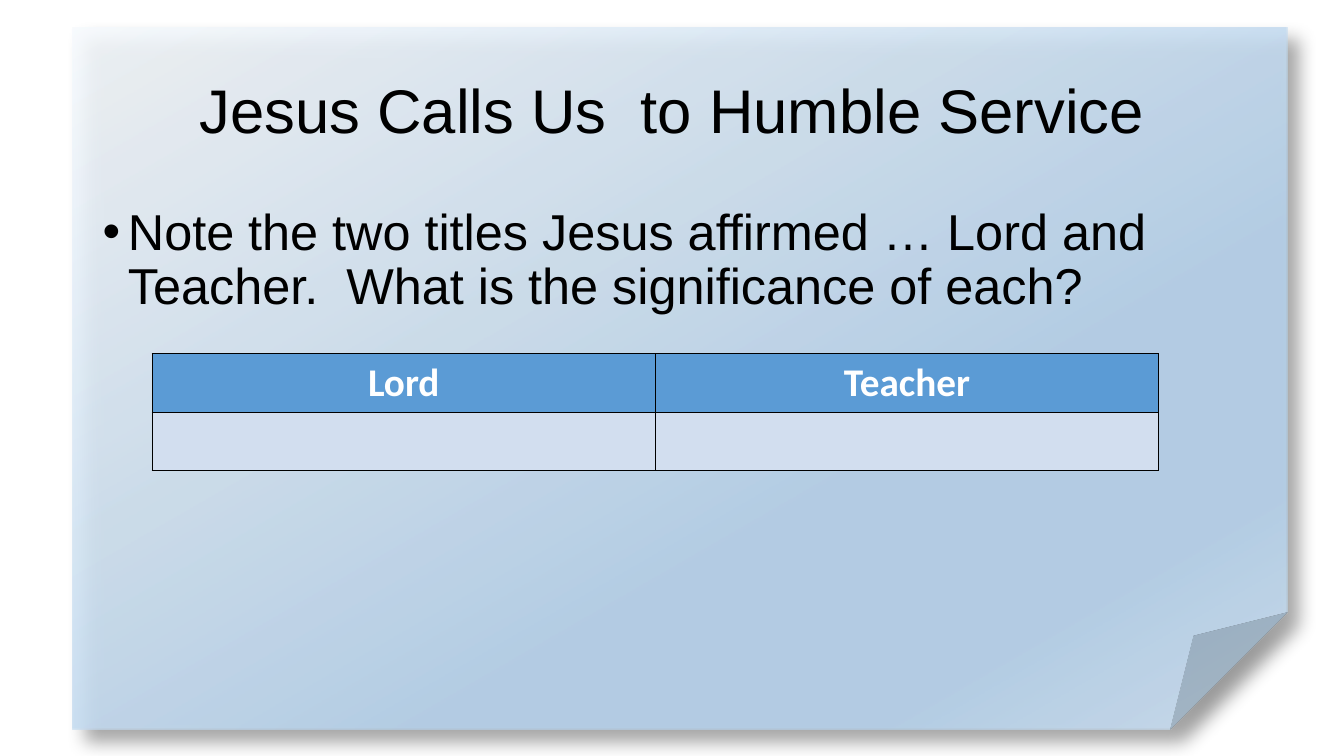
from lxml import etree
from pptx import Presentation
from pptx.dml.color import RGBColor
from pptx.enum.shapes import MSO_SHAPE
from pptx.enum.text import MSO_ANCHOR, PP_ALIGN
from pptx.oxml import parse_xml
from pptx.oxml.ns import nsdecls, qn
from pptx.util import Inches, Pt

TITLE = "Jesus Calls Us  to Humble Service"
BODY = ("Note the two titles Jesus affirmed … Lord and Teacher.  "
        "What is the significance of each?")
ROWS = [("Lord", "Teacher"), ("", "")]

BLACK = RGBColor(0x00, 0x00, 0x00)
WHITE = RGBColor(0xFF, 0xFF, 0xFF)
BLUE = RGBColor(0x5B, 0x9B, 0xD5)
PALE = RGBColor(0xD2, 0xDE, 0xEF)
PAPER = [(0, "F7FAFD"), (64, "B5D2EC"), (83, "B5D2EC"), (100, "CEE1F2")]

LEFT, CENTER = PP_ALIGN.LEFT, PP_ALIGN.CENTER
TOP, MIDDLE = MSO_ANCHOR.TOP, MSO_ANCHOR.MIDDLE
FOLDED = MSO_SHAPE.FOLDED_CORNER

COL_W, ROW_H = 4.99, 0.58


def box(at):
    return [Inches(n) for n in at]


def write(frame, text, size, font="Arial", color=BLACK, bold=False,
          align=LEFT, spacing=None, bullet=False):
    para = frame.paragraphs[0]
    para.alignment = align
    para.line_spacing = spacing
    if bullet:
        props = para._p.get_or_add_pPr()
        props.set("marL", str(Inches(0.25)))
        props.set("indent", str(Inches(-0.25)))
        etree.SubElement(props, qn("a:buFont")).set("typeface", "Arial")
        etree.SubElement(props, qn("a:buChar")).set("char", "•")
    run = para.add_run()
    run.text = text
    run.font.size = Pt(size)
    run.font.name = font
    run.font.bold = bold
    run.font.color.rgb = color


def add_text(slide, at, text, size, anchor=TOP, **style):
    frame = slide.shapes.add_textbox(*box(at)).text_frame
    frame.word_wrap = True
    frame.vertical_anchor = anchor
    write(frame, text, size, **style)


def add_paper(slide):
    """Folded sheet with a translucent gradient and a soft shadow."""
    sheet = slide.shapes.add_shape(FOLDED, *box((0.72, 0.27, 12.05, 6.97)))
    sheet.line.fill.background()
    stops = "".join(
        f'<a:gs pos="{pos * 1000}"><a:srgbClr val="{tint}">'
        '<a:alpha val="87000"/></a:srgbClr></a:gs>' for pos, tint in PAPER)
    fill = parse_xml(
        f'<a:gradFill {nsdecls("a")} rotWithShape="1"><a:gsLst>{stops}</a:gsLst>'
        f'<a:lin ang="{60 * 60000}" scaled="0"/></a:gradFill>')
    shadow = parse_xml(
        f'<a:effectLst {nsdecls("a")}><a:outerShdw blurRad="{Pt(13)}" '
        f'dist="{Pt(13)}" dir="{45 * 60000}" algn="tl" rotWithShape="0">'
        '<a:srgbClr val="000000"><a:alpha val="40000"/></a:srgbClr>'
        '</a:outerShdw></a:effectLst>')
    props = sheet._element.spPr
    props.find(qn("a:prstGeom")).addnext(fill)
    props.find(qn("a:ln")).addnext(shadow)


def add_border(cell):
    props = cell._tc.get_or_add_tcPr()
    for spot, side in enumerate(("lnL", "lnR", "lnT", "lnB")):
        props.insert(spot, parse_xml(
            f'<a:{side} {nsdecls("a")} w="{Pt(1)}"><a:solidFill>'
            f'<a:srgbClr val="{BLACK}"/></a:solidFill></a:{side}>'))


def add_grid(slide):
    rows, cols = len(ROWS), len(ROWS[0])
    at = (1.51, 3.51, COL_W * cols, ROW_H * rows)
    table = slide.shapes.add_table(rows, cols, *box(at)).table
    for r, words in enumerate(ROWS):
        table.rows[r].height = Inches(ROW_H)
        for c, word in enumerate(words):
            cell = table.cell(r, c)
            cell.fill.solid()
            cell.fill.fore_color.rgb = PALE if r else BLUE
            add_border(cell)
            if word:
                write(cell.text_frame, word, 28, font="Calibri",
                      color=WHITE, bold=True, align=CENTER)


def main():
    deck = Presentation()
    deck.slide_width, deck.slide_height = Inches(13.33), Inches(7.5)
    slide = deck.slides.add_slide(deck.slide_layouts[6])
    add_paper(slide)
    add_text(slide, (0.92, 0.4, 11.5, 1.45), TITLE, 44, anchor=MIDDLE,
             align=CENTER, spacing=0.9)
    add_text(slide, (0.92, 2, 11.5, 4.76), BODY, 36, spacing=0.9, bullet=True)
    add_grid(slide)
    deck.save("out.pptx")


if __name__ == "__main__":
    main()
